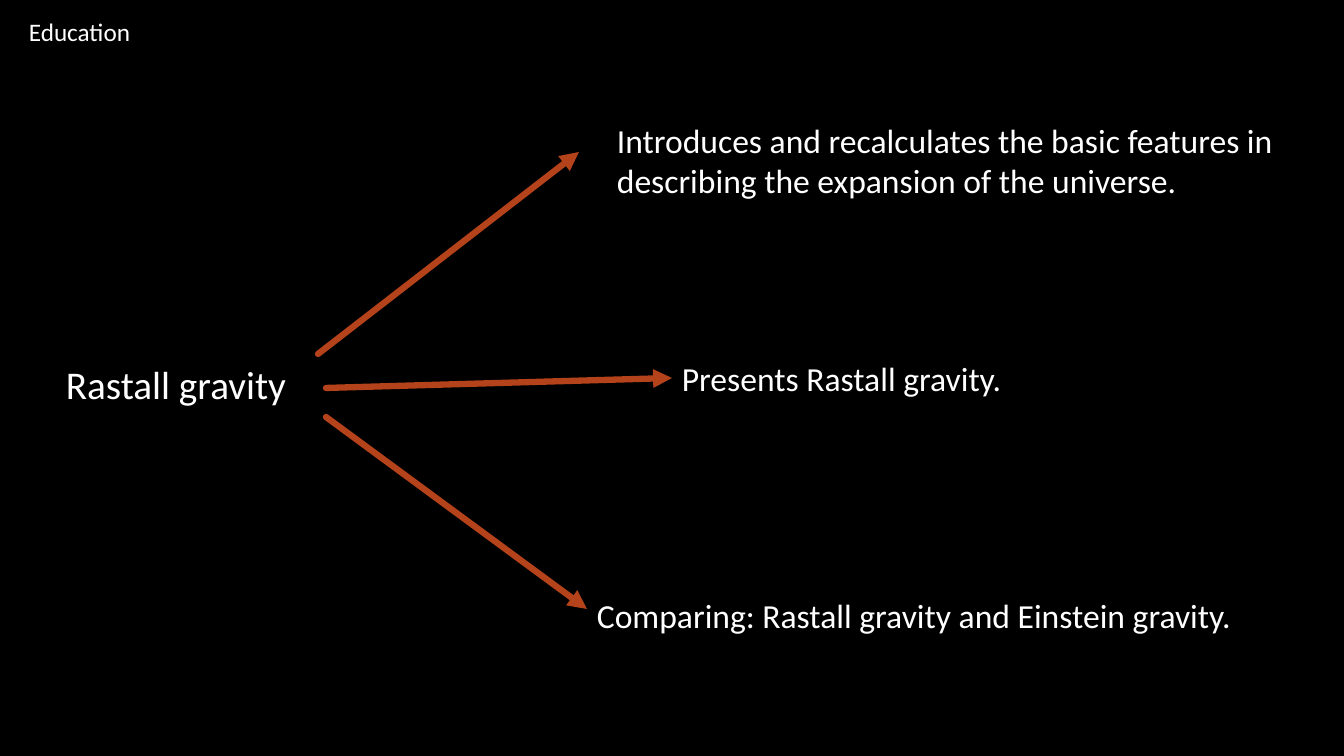
from lxml import etree
from pptx import Presentation
from pptx.dml.color import RGBColor
from pptx.enum.shapes import MSO_CONNECTOR
from pptx.enum.text import MSO_AUTO_SIZE
from pptx.oxml.ns import qn
from pptx.util import Pt

STRAIGHT = MSO_CONNECTOR.STRAIGHT
GROW = MSO_AUTO_SIZE.SHAPE_TO_FIT_TEXT
SCALE = 914400 / 100.8
SIZE = (1344, 756)
BLACK, WHITE, RUST = "000000", "FFFFFF", "B4421A"
LEFT = 1

TITLE = ("Education", (19, 11, 446, 40), 18)
TOPIC = ("Rastall gravity", (56, 355, 269, 57), 28)
POINTS = [
    ("Introduces and recalculates the basic features in describing the expansion of the universe.",
     (607, 115, 700, 92), 24),
    ("Presents Rastall gravity.", (672, 353, 384, 50), 24),
    ("Comparing: Rastall gravity and Einstein gravity.", (587, 590, 713, 50), 24),
]
ARROWS = [
    ((318, 354), (579, 152), None),
    ((326, 388), (672, 378), 1),
    ((326, 417), (587, 609), None),
]


def px(*vals):
    return [round(v * SCALE) for v in vals]


def color(code):
    return RGBColor.from_string(code)


def add_text(slide, text, area, size):
    box = slide.shapes.add_textbox(*px(*area))
    frame = box.text_frame
    for key, val in {"word_wrap": True, "auto_size": GROW}.items():
        setattr(frame, key, val)
    run = frame.paragraphs[0].add_run()
    run.text = text
    for key, val in {"name": "Calibri", "size": Pt(size)}.items():
        setattr(run.font, key, val)
    run.font.color.rgb = color(WHITE)
    return box


def add_arrow(slide, start, end, box):
    arrow = slide.shapes.add_connector(STRAIGHT, *px(*start, *end))
    if box is not None:
        arrow.end_connect(box, LEFT)
    arrow.line.width = Pt(4.5)
    arrow.line.color.rgb = color(RUST)
    props = arrow.line._get_or_add_ln()
    props.set("cap", "rnd")
    etree.SubElement(props, qn("a:round"))
    etree.SubElement(props, qn("a:tailEnd"), type="triangle")
    etree.SubElement(arrow._element.spPr, qn("a:effectLst"))


def main():
    deck = Presentation()
    deck.slide_width, deck.slide_height = px(*SIZE)
    slide = deck.slides.add_slide(deck.slide_layouts[6])
    fill = slide.background.fill
    fill.solid()
    fill.fore_color.rgb = color(BLACK)
    for item in (TITLE, TOPIC):
        add_text(slide, *item)
    boxes = [add_text(slide, *item) for item in POINTS]
    for start, end, goal in ARROWS:
        add_arrow(slide, start, end, None if goal is None else boxes[goal])
    deck.save("out.pptx")


if __name__ == "__main__":
    main()
